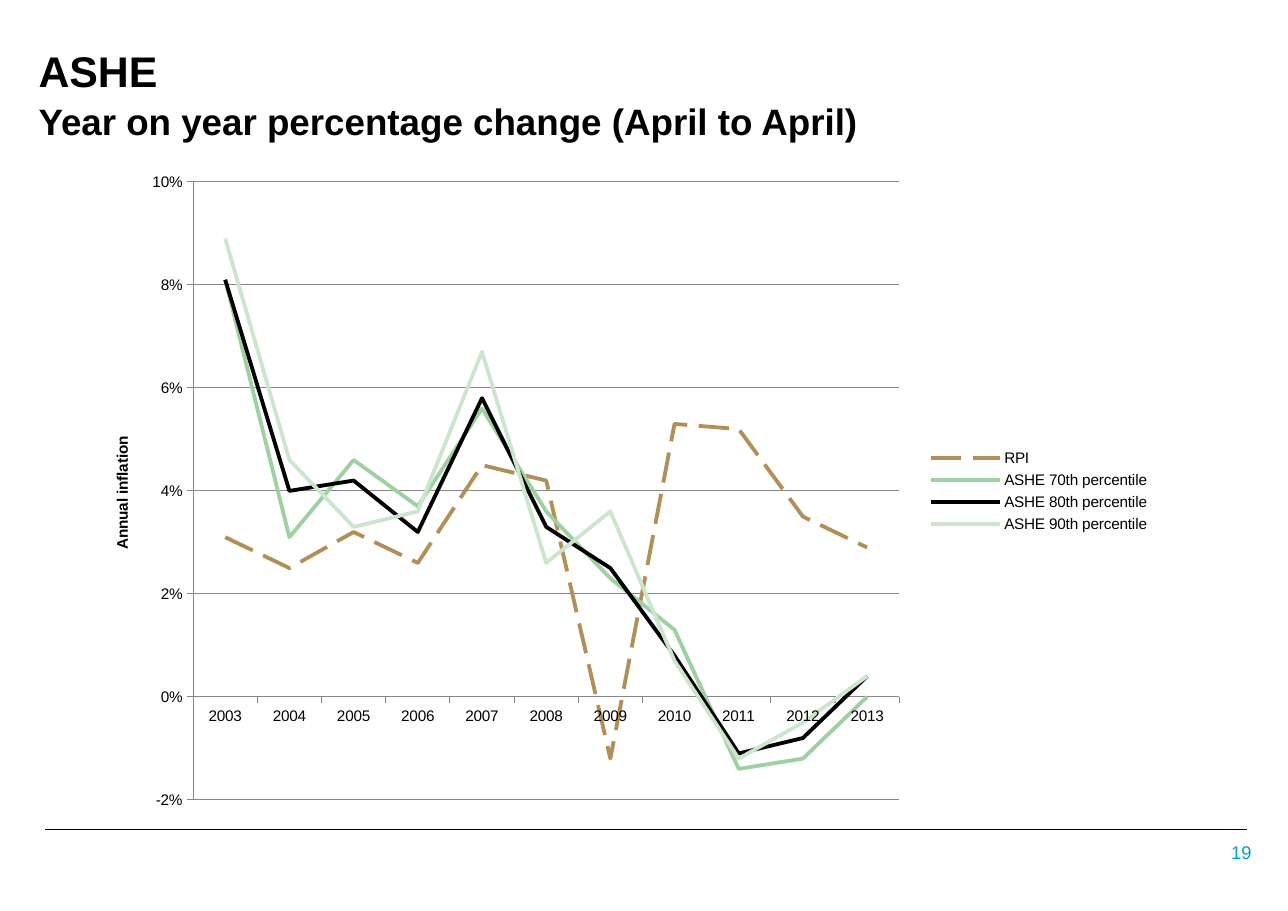
from lxml import etree
from pptx import Presentation
from pptx.chart.data import CategoryChartData
from pptx.dml.color import RGBColor
from pptx.enum.chart import XL_CHART_TYPE, XL_LEGEND_POSITION, XL_TICK_MARK
from pptx.enum.dml import MSO_LINE
from pptx.enum.shapes import MSO_CONNECTOR
from pptx.enum.text import MSO_ANCHOR, PP_ALIGN
from pptx.oxml import parse_xml
from pptx.oxml.ns import nsdecls, qn
from pptx.util import Inches, Pt

BLACK = RGBColor(0x00, 0x00, 0x00)
GREY = RGBColor(0x86, 0x86, 0x86)
CYAN = RGBColor(0x00, 0xA3, 0xC7)
BROWN = RGBColor(0xB3, 0x8F, 0x55)
GREEN = RGBColor(0x9D, 0xD2, 0xA0)
PALE_GREEN = RGBColor(0xCC, 0xE5, 0xCD)

YEARS = [str(year) for year in range(2003, 2014)]
INFLATION = [
    ("RPI", BROWN, MSO_LINE.LONG_DASH,
     (0.031, 0.025, 0.032, 0.026, 0.045, 0.042, -0.012, 0.053, 0.052, 0.035, 0.029)),
    ("ASHE 70th percentile", GREEN, MSO_LINE.SOLID,
     (0.081, 0.031, 0.046, 0.037, 0.056, 0.036, 0.023, 0.013, -0.014, -0.012, 0)),
    ("ASHE 80th percentile", BLACK, MSO_LINE.SOLID,
     (0.081, 0.04, 0.042, 0.032, 0.058, 0.033, 0.025, 0.008, -0.011, -0.008, 0.004)),
    ("ASHE 90th percentile", PALE_GREEN, MSO_LINE.SOLID,
     (0.089, 0.046, 0.033, 0.036, 0.067, 0.026, 0.036, 0.007, -0.012, -0.005, 0.004)),
]


def set_layout(element, before, inner=False, **fractions):
    for old in element.findall(qn("c:layout")):
        element.remove(old)
    target = '<c:layoutTarget val="inner"/>' if inner else ""
    modes = "".join(f'<c:{key}Mode val="edge"/>' for key in "xy")
    values = "".join(f'<c:{key} val="{value}"/>' for key, value in fractions.items())
    layout = parse_xml(
        f'<c:layout {nsdecls("c")}><c:manualLayout>{target}{modes}{values}'
        "</c:manualLayout></c:layout>")
    element.find(qn(before)).addprevious(layout)


class SlideBuilder:
    font_name = "Arial"

    def __init__(self, slide):
        self.slide = slide

    def style(self, font, size, color=BLACK, bold=False):
        font.name = self.font_name
        font.size = Pt(size)
        font.bold = bold
        font.color.rgb = color

    def text(self, box, lines, margin, color=BLACK, bold=False,
             align=PP_ALIGN.LEFT, anchor=MSO_ANCHOR.TOP, spacing=1.0):
        frame = self.slide.shapes.add_textbox(*map(Inches, box)).text_frame
        frame.word_wrap = True
        frame.vertical_anchor = anchor
        frame.margin_left = frame.margin_right = Inches(margin)
        frame.margin_top = frame.margin_bottom = Inches(0.06)
        paragraph = frame.paragraphs[0]
        paragraph.alignment = align
        paragraph.line_spacing = spacing
        for index, (words, size) in enumerate(lines):
            if index:
                paragraph.add_line_break()
            run = paragraph.add_run()
            run.text = words
            self.style(run.font, size, color, bold)

    def rule(self, left, right, top):
        rule = self.slide.shapes.add_connector(
            MSO_CONNECTOR.STRAIGHT, *map(Inches, (left, top, right, top)))
        rule.line.color.rgb = BLACK
        rule.line.width = Pt(0.75)
        etree.SubElement(rule._element.spPr, qn("a:effectLst"))

    def line_chart(self, box, categories, series, axis_title):
        data = CategoryChartData(number_format="0%")
        data.categories = categories
        for name, _, _, values in series:
            data.add_series(name, values)
        chart = self.slide.shapes.add_chart(
            XL_CHART_TYPE.LINE, *map(Inches, box), data).chart
        chart.has_title = False
        self.style(chart.font, 10)

        plot = chart.plots[0]
        plot.vary_by_categories = False
        for curve, (_, color, dash, _) in zip(plot.series, series):
            curve.smooth = False
            curve.format.line.color.rgb = color
            curve.format.line.width = Pt(2.5)
            curve.format.line.dash_style = dash

        scale = chart.value_axis
        scale.minimum_scale, scale.maximum_scale, scale.major_unit = -0.02, 0.1, 0.02
        scale.tick_labels.number_format = "0%"
        scale.tick_labels.number_format_is_linked = False
        scale.has_major_gridlines = True
        for line in (scale.major_gridlines.format.line, scale.format.line,
                     chart.category_axis.format.line):
            line.color.rgb = GREY
            line.width = Pt(0.75)
        for axis in (scale, chart.category_axis):
            axis.major_tick_mark = XL_TICK_MARK.OUTSIDE
            axis.minor_tick_mark = XL_TICK_MARK.NONE

        title = scale.axis_title
        run = title.text_frame.paragraphs[0].add_run()
        run.text = axis_title
        self.style(run.font, 10, bold=True)

        chart.has_legend = True
        legend = chart.legend
        legend.position = XL_LEGEND_POSITION.RIGHT
        legend.include_in_layout = False
        self.style(legend.font, 10)

        set_layout(plot._element.getparent(), "c:lineChart", inner=True,
                   x=0.102, y=0.032, w=0.658, h=0.935)
        set_layout(title._element, "c:overlay", x=0.024, y=0.413)
        set_layout(legend._element, "c:overlay", x=0.78, y=0.43, w=0.22, h=0.14)


def main():
    presentation = Presentation()
    presentation.slide_width = Inches(11.69)
    presentation.slide_height = Inches(8.27)
    builder = SlideBuilder(presentation.slides.add_slide(presentation.slide_layouts[6]))

    builder.rule(0.41, 11.32, 7.53)
    builder.text((0.24, 0.31, 9.23, 1.38),
                 [("ASHE", 28), ("Year on year percentage change (April to April)", 24)],
                 margin=0.11, bold=True, spacing=1.07)
    builder.text((10.68, 7.62, 0.81, 0.24), [("19", 12)], margin=0.13,
                 color=CYAN, align=PP_ALIGN.RIGHT, anchor=MSO_ANCHOR.MIDDLE)
    builder.line_chart((0.76, 1.46, 9.74, 6), YEARS, INFLATION, "Annual inflation")

    presentation.save("out.pptx")


if __name__ == "__main__":
    main()
